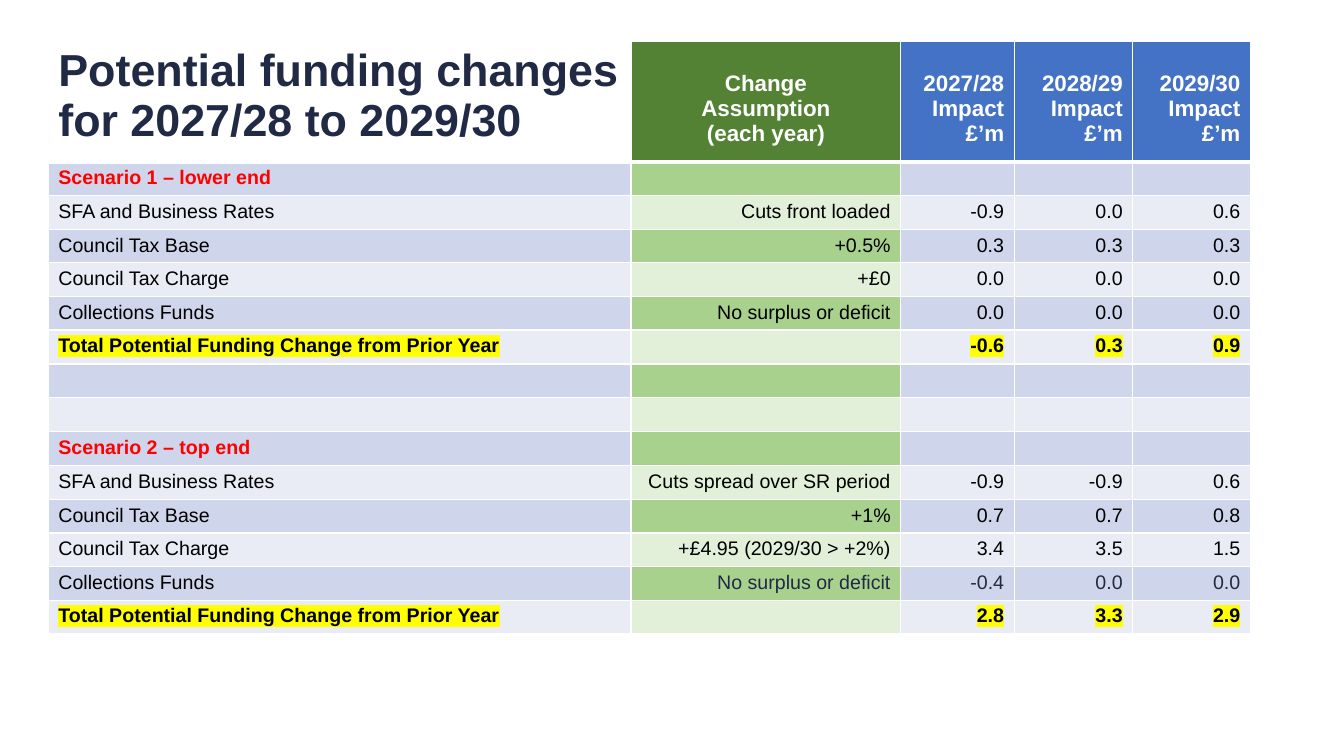
import pptx
import pptx.util
from lxml import etree
from pptx.dml.color import RGBColor
from pptx.enum.text import PP_ALIGN
from pptx.oxml.ns import qn

PX = 9525
WHITE = RGBColor(0xFF, 0xFF, 0xFF)
BLACK = RGBColor(0, 0, 0)
NAVY = RGBColor(0x20, 0x2A, 0x44)
RED = RGBColor(0xFF, 0, 0)
YELLOW = RGBColor(0xFF, 0xFF, 0)
BLUE = RGBColor(0x44, 0x72, 0xC4)
GREEN = RGBColor(0x54, 0x82, 0x35)
BLUES = RGBColor(0xCF, 0xD5, 0xEA), RGBColor(0xE9, 0xEB, 0xF5)
GREENS = RGBColor(0xA9, 0xD1, 0x8E), RGBColor(0xE2, 0xF0, 0xD9)

WIDTHS = [555, 257, 108, 113, 112]
HEAD, ROW = 115, 32
TOTAL = "Total Potential Funding Change from Prior Year"
BLANK = [""] * 5
ROWS = [
    ["Potential funding changes for 2027/28 to 2029/30",
     "Change\nAssumption\n(each year)"]
    + [f"{year}\nImpact\n£’m" for year in ("2027/28", "2028/29", "2029/30")],
    ["Scenario 1 – lower end", "", "", "", ""],
    ["SFA and Business Rates", "Cuts front loaded", "-0.9", "0.0", "0.6"],
    ["Council Tax Base", "+0.5%", "0.3", "0.3", "0.3"],
    ["Council Tax Charge", "+£0", "0.0", "0.0", "0.0"],
    ["Collections Funds", "No surplus or deficit", "0.0", "0.0", "0.0"],
    [TOTAL, "", "-0.6", "0.3", "0.9"],
    BLANK,
    BLANK,
    ["Scenario 2 – top end", "", "", "", ""],
    ["SFA and Business Rates", "Cuts spread over SR period", "-0.9", "-0.9", "0.6"],
    ["Council Tax Base", "+1%", "0.7", "0.7", "0.8"],
    ["Council Tax Charge", "+£4.95 (2029/30 > +2%)", "3.4", "3.5", "1.5"],
    ["Collections Funds", "No surplus or deficit", "-0.4", "0.0", "0.0"],
    [TOTAL, "", "2.8", "3.3", "2.9"],
]
LATE_FUNDS = 13


def add_fill(node, color):
    fill = etree.SubElement(node, qn("a:solidFill"))
    etree.SubElement(fill, qn("a:srgbClr"), val=str(color))


def set_text(cell, text, size, bold, color, align, mark):
    """Write the text; mark is a highlight colour or None."""
    cell.text_frame.text = text
    for para in cell.text_frame.paragraphs:
        para.alignment = align
        if not text:
            # An empty cell keeps its row low only with its own text size
            etree.SubElement(para._p, qn("a:endParaRPr"), sz=str(size * 100))
        for run in para.runs:
            font = run.font
            font.size = pptx.util.Pt(size)
            font.bold = bold
            font.color.rgb = color
            if mark:
                light = etree.SubElement(run._r.get_or_add_rPr(), qn("a:highlight"))
                etree.SubElement(light, qn("a:srgbClr"), val=str(mark))
            font.name = "Arial"


deck = pptx.Presentation()
deck.slide_width = 1280 * PX
deck.slide_height = 720 * PX
slide = deck.slides.add_slide(deck.slide_layouts[6])

frame = slide.shapes.add_table(
    len(ROWS), len(WIDTHS), 46 * PX, 39 * PX,
    sum(WIDTHS) * PX, (HEAD + ROW * (len(ROWS) - 1)) * PX)
table = frame.table
table.first_row = False
table.horz_banding = False
for col, width in zip(table.columns, WIDTHS):
    col.width = width * PX

for r, texts in enumerate(ROWS):
    table.rows[r].height = (ROW if r else HEAD) * PX
    for c, text in enumerate(texts):
        cell = table.cell(r, c)
        props = cell._tc.get_or_add_tcPr()
        for side in "LRTB":
            thick = (r, side) in ((0, "B"), (1, "T"))
            width = pptx.util.Pt(3 if thick else 1)
            add_fill(etree.SubElement(props, qn("a:ln" + side), w=str(width)), WHITE)

        size, bold, color, mark = 14, False, BLACK, None
        align = PP_ALIGN.RIGHT if c else PP_ALIGN.LEFT
        shade = (GREENS if c == 1 else BLUES)[(r + 1) % 2]
        if r == 0:
            bold = True
            size, color = (16, WHITE) if c else (32, NAVY)
            shade = [None, GREEN, BLUE, BLUE, BLUE][c]
            if c:
                cell.margin_top = 29 * PX
            if c == 1:
                align = PP_ALIGN.CENTER
        elif text.startswith("Scenario"):
            bold, color = True, RED
        elif texts[0] == TOTAL:
            bold, mark = True, YELLOW
        elif r == LATE_FUNDS and c:
            color = NAVY

        if shade is None:
            cell.fill.background()
        else:
            cell.fill.solid()
            cell.fill.fore_color.rgb = shade
        set_text(cell, text, size, bold, color, align, mark)

deck.save("out.pptx")
